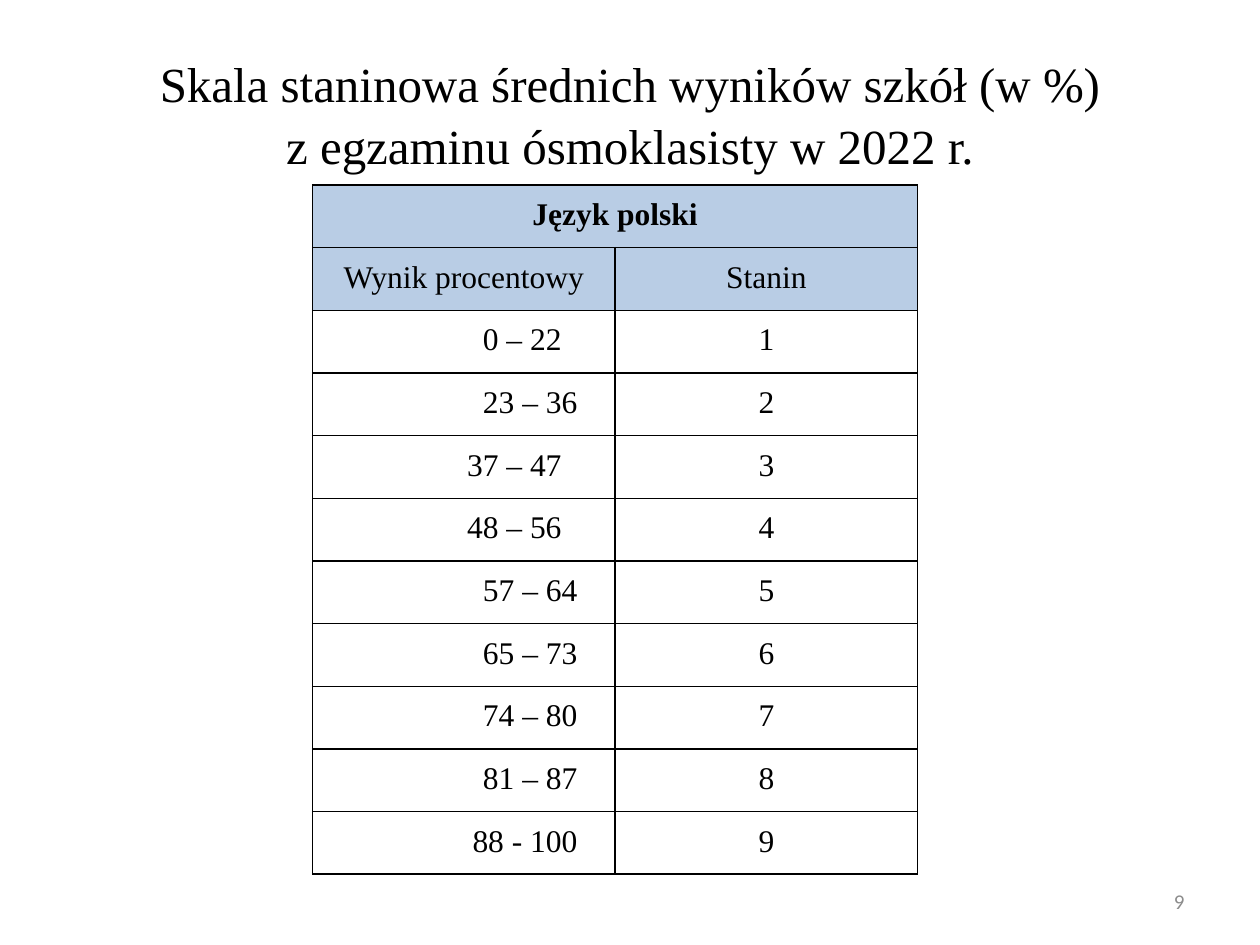
from lxml import etree
from pptx import Presentation
from pptx.dml.color import RGBColor
from pptx.enum.text import MSO_ANCHOR, PP_ALIGN
from pptx.oxml.ns import qn
from pptx.util import Cm, Pt

CENTER, RIGHT = PP_ALIGN.CENTER, PP_ALIGN.RIGHT
MIDDLE = MSO_ANCHOR.MIDDLE
BLACK = RGBColor(0x00, 0x00, 0x00)
GREY = RGBColor(0x8C, 0x8C, 0x8C)
LIGHT_BLUE = RGBColor(0xB9, 0xCD, 0xE5)
SERIF = "Times New Roman"

TITLE = ["Skala staninowa średnich wyników szkół (w %)",
         "z egzaminu ósmoklasisty w 2022 r."]
HEADERS = ["Wynik procentowy", "Stanin"]
RANGES = ["0 – 22", "23 – 36", "37 – 47", "48 – 56", "57 – 64",
          "65 – 73", "74 – 80", "81 – 87", "88 - 100"]
INDENTED_RANGES = {"0 – 22", "37 – 47", "48 – 56"}
HEADER_ROWS = 2
ROW_HEIGHT = Cm(1.26)
COLUMN_WIDTH = Cm(6.1)


def write(para, text, size, align, color=BLACK, font=SERIF, bold=False):
    para.alignment = align
    span = para.add_run()
    span.text = text
    span.font.size = Pt(size)
    span.font.name = font
    span.font.bold = bold
    span.font.color.rgb = color


def draw_borders(cell):
    properties = cell._tc.get_or_add_tcPr()
    for side in ("a:lnL", "a:lnR", "a:lnT", "a:lnB"):
        line = etree.SubElement(properties, qn(side), w=str(Pt(1)))
        fill = etree.SubElement(line, qn("a:solidFill"))
        etree.SubElement(fill, qn("a:srgbClr"), val=str(BLACK))


deck = Presentation()
deck.slide_width, deck.slide_height = Cm(25.4), Cm(19.05)
page = deck.slides.add_slide(deck.slide_layouts[6])

# Page number
number_box = page.shapes.add_textbox(Cm(18.2), Cm(17.66), Cm(5.93), Cm(1.01))
number_box.text_frame.word_wrap = True
number_box.text_frame.vertical_anchor = MIDDLE
write(number_box.text_frame.paragraphs[0], "9", 12, RIGHT, GREY, "Calibri")

# Title
title_box = page.shapes.add_textbox(0, 0, deck.slide_width, Cm(3.91))
title = title_box.text_frame
title.word_wrap = True
title.margin_left = title.margin_right = Cm(1.5)
title.margin_top, title.margin_bottom = Cm(1), Cm(0.5)
for index, line_text in enumerate(TITLE):
    para = title.add_paragraph() if index else title.paragraphs[0]
    para.line_spacing = 1.06
    write(para, line_text, 28, CENTER)

# Stanine table
rows = [["Język polski", ""], HEADERS]
rows += [[score, str(stanine)] for stanine, score in enumerate(RANGES, 1)]
table = page.shapes.add_table(
    len(rows), len(HEADERS), Cm(6.3), Cm(3.73),
    COLUMN_WIDTH * len(HEADERS), ROW_HEIGHT * len(rows)).table
table.first_row = table.horz_banding = False
for column in table.columns:
    column.width = COLUMN_WIDTH
table.cell(0, 0).merge(table.cell(0, 1))

for row_index, row in enumerate(rows):
    table.rows[row_index].height = ROW_HEIGHT
    is_header = row_index < HEADER_ROWS
    for column_index, text in enumerate(row):
        cell = table.cell(row_index, column_index)
        cell.margin_left = cell.margin_right = Cm(0.25)
        cell.margin_top = cell.margin_bottom = Cm(0.25)
        draw_borders(cell)
        if is_header:
            cell.fill.solid()
            cell.fill.fore_color.rgb = LIGHT_BLUE
        else:
            cell.fill.background()
        is_range = column_index == 0 and not is_header
        if is_range:
            cell.margin_right = Cm(1.08 if text in INDENTED_RANGES else 0.76)
        if text:
            write(cell.text_frame.paragraphs[0], text, 18,
                  RIGHT if is_range else CENTER, bold=row_index == 0)

deck.save("out.pptx")
